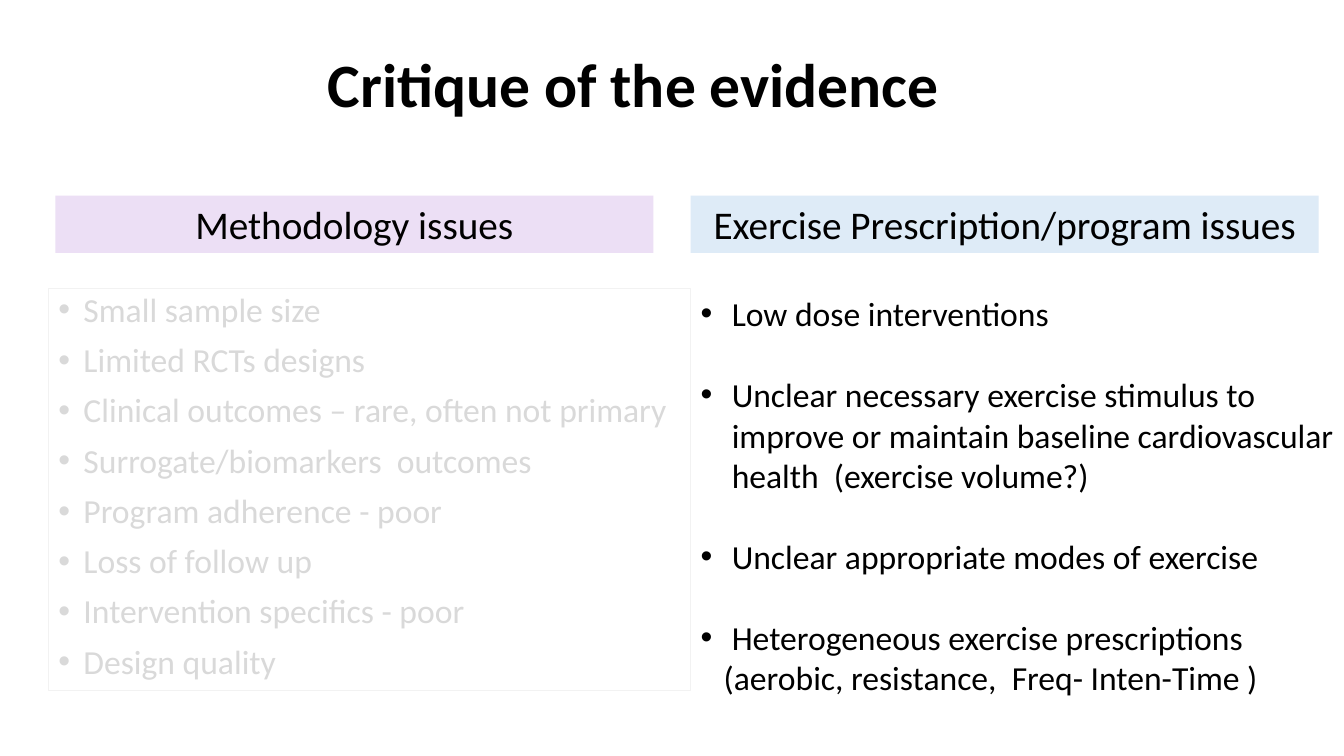
import pptx
import pptx.dml.color
import pptx.enum.shapes
import pptx.enum.text
import pptx.util
from lxml import etree
from pptx.dml.color import RGBColor
from pptx.oxml.ns import qn
from pptx.util import Inches, Pt

TITLE = "Critique of the evidence "
METHODOLOGY_ISSUES = [
    "Small sample size",
    "Limited RCTs designs",
    "Clinical outcomes – rare, often not primary",
    "Surrogate/biomarkers  outcomes",
    "Program adherence - poor",
    "Loss of follow up",
    "Intervention specifics - poor",
    "Design quality",
]
PROGRAM_ISSUES = [
    "Low dose interventions",
    "Unclear necessary exercise stimulus to improve or maintain baseline "
    "cardiovascular health  (exercise volume?)",
    "Unclear appropriate modes of exercise",
    "Heterogeneous exercise prescriptions",
]
PRESCRIPTION_DETAIL = "(aerobic, resistance,  Freq- Inten-Time )"

BLACK = RGBColor(0x00, 0x00, 0x00)
FADED = RGBColor(0xD9, 0xD9, 0xD9)
OUTLINE = RGBColor(0xF2, 0xF2, 0xF2)
LILAC = RGBColor(0xEC, 0xDF, 0xF5)
PALE_BLUE = RGBColor(0xDE, 0xEB, 0xF7)

FONT = "Calibri"
HEADING_TOP, HEADING_HEIGHT = 1.94, 0.57
LIST_TOP = 2.86
RIGHT_COLUMN = 6.85
HEADINGS = [
    ("Methodology issues", 0.55, 5.93, LILAC),
    ("Exercise Prescription/program issues", RIGHT_COLUMN, 6.23, PALE_BLUE),
]


def set_font(paragraph, size, color, bold=False):
    """Apply the slide font to a whole paragraph."""
    paragraph.font.name = FONT
    paragraph.font.size = Pt(size)
    paragraph.font.color.rgb = color
    paragraph.font.bold = bold


def set_indent(paragraph, left, hanging=0):
    """Set the left margin and, with a hanging indent, a bullet."""
    properties = paragraph._p.get_or_add_pPr()
    properties.set("marL", str(Inches(left)))
    properties.set("indent", str(-Inches(hanging)))
    if hanging:
        bullet_font = etree.SubElement(properties, qn("a:buFont"))
        bullet_font.set("typeface", "Arial")
        etree.SubElement(properties, qn("a:buChar")).set("char", "•")


def add_list(slide, box, items, color, indent, gap, line_spacing):
    """Add a bulleted text box whose items are set apart by a gap in points."""
    shape = slide.shapes.add_textbox(*map(Inches, box))
    frame = shape.text_frame
    frame.word_wrap = True
    for index, item in enumerate(items):
        paragraph = frame.paragraphs[0] if index == 0 else frame.add_paragraph()
        paragraph.text = item
        paragraph.line_spacing = line_spacing
        paragraph.space_before = Pt(gap if index else 0)
        set_indent(paragraph, indent, indent)
        set_font(paragraph, 24, color)
    return shape


def add_heading(slide, text, left, width, fill):
    """Add a filled column heading."""
    shape = slide.shapes.add_shape(
        pptx.enum.shapes.MSO_SHAPE.RECTANGLE,
        Inches(left), Inches(HEADING_TOP), Inches(width), Inches(HEADING_HEIGHT))
    shape.shadow.inherit = False
    shape.fill.solid()
    shape.fill.fore_color.rgb = fill
    shape.line.fill.background()
    shape.text_frame.word_wrap = True
    shape.text_frame.vertical_anchor = pptx.enum.text.MSO_ANCHOR.TOP
    paragraph = shape.text_frame.paragraphs[0]
    paragraph.text = text
    paragraph.alignment = pptx.enum.text.PP_ALIGN.CENTER
    set_font(paragraph, 28, BLACK)


def main():
    """Build the slide and save it."""
    presentation = pptx.Presentation()
    presentation.slide_width = Inches(13.33)
    presentation.slide_height = Inches(7.5)
    slide = presentation.slides.add_slide(presentation.slide_layouts[5])

    title = slide.shapes.title
    title.left, title.top = Inches(3.02), Inches(0.14)
    title.width, title.height = Inches(6.67), Inches(1.45)
    title.text_frame.vertical_anchor = pptx.enum.text.MSO_ANCHOR.MIDDLE
    paragraph = title.text_frame.paragraphs[0]
    paragraph.text = TITLE
    paragraph.alignment = pptx.enum.text.PP_ALIGN.CENTER
    paragraph.line_spacing = 0.9
    set_font(paragraph, 44, BLACK, bold=True)

    methodology = add_list(slide, (0.48, LIST_TOP, 6.37, 3.99),
                           METHODOLOGY_ISSUES, FADED, 0.25, 10, 0.9)
    methodology.line.color.rgb = OUTLINE
    methodology.line.width = Pt(0.75)

    program = add_list(slide, (RIGHT_COLUMN, LIST_TOP, 6.67, 4.14),
                       PROGRAM_ISSUES, BLACK, 0.31, 29, 1.0)
    detail = program.text_frame.add_paragraph()
    detail.text = PRESCRIPTION_DETAIL
    set_indent(detail, 0.23)
    set_font(detail, 24, BLACK)

    for heading in HEADINGS:
        add_heading(slide, *heading)

    presentation.save("out.pptx")


if __name__ == "__main__":
    main()
